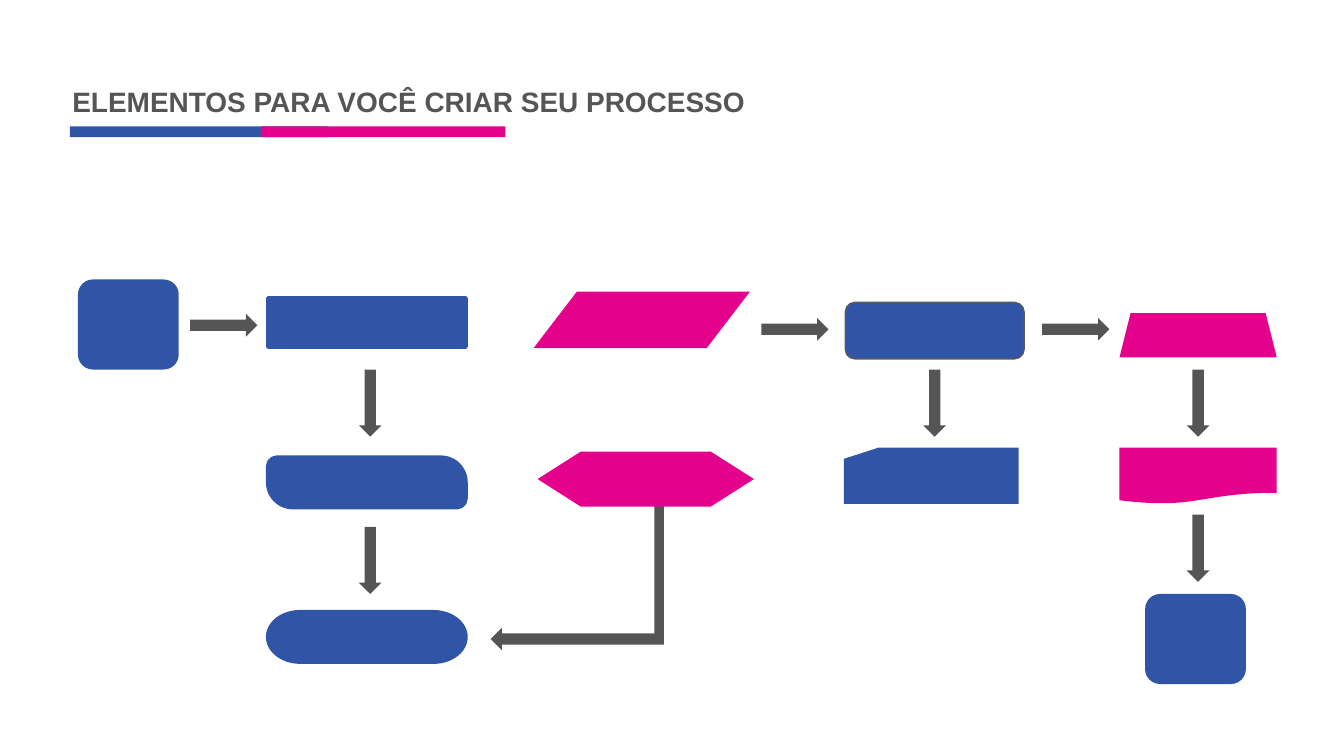
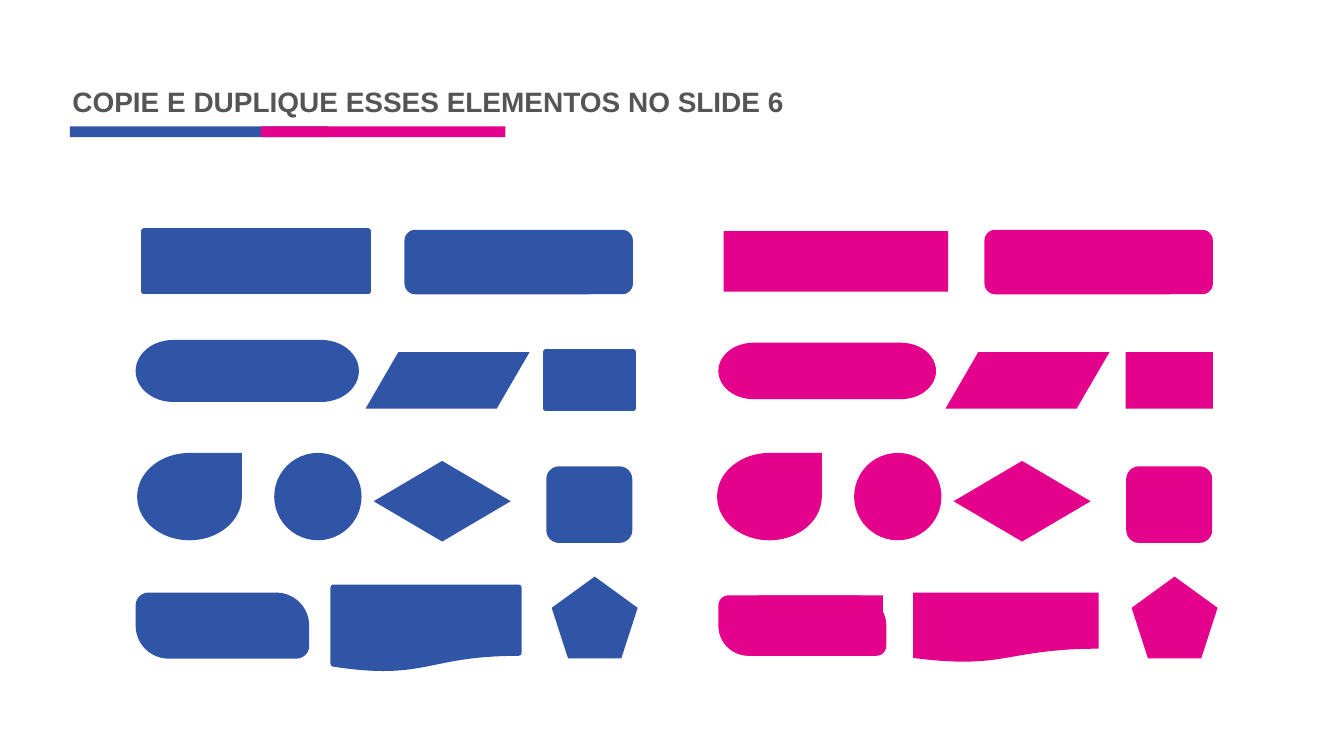
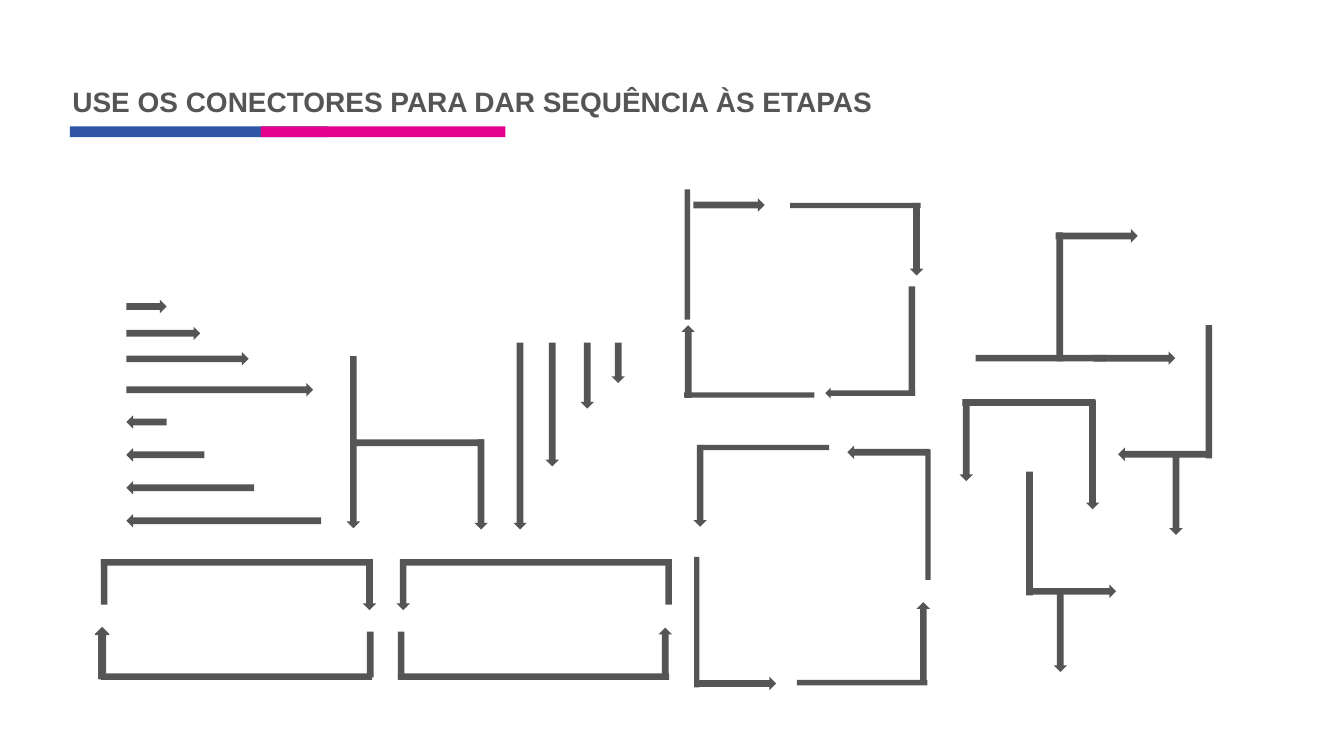
from dataclasses import dataclass

from pptx import Presentation
from pptx.dml.color import RGBColor
from pptx.enum.shapes import MSO_SHAPE
from pptx.enum.text import MSO_ANCHOR, PP_ALIGN
from pptx.util import Inches, Pt

PROCESS = MSO_SHAPE.RECTANGLE
ROUNDED = MSO_SHAPE.ROUNDED_RECTANGLE
ALTERNATE = MSO_SHAPE.FLOWCHART_ALTERNATE_PROCESS
TERMINATOR = MSO_SHAPE.FLOWCHART_TERMINATOR
DIAGONAL = MSO_SHAPE.ROUND_2_DIAG_RECTANGLE
DATA = MSO_SHAPE.FLOWCHART_DATA
CARD = MSO_SHAPE.FLOWCHART_CARD
DOCUMENT = MSO_SHAPE.FLOWCHART_DOCUMENT
PREPARATION = MSO_SHAPE.FLOWCHART_PREPARATION
DECISION = MSO_SHAPE.FLOWCHART_DECISION
TRAPEZOID = MSO_SHAPE.TRAPEZOID
ELLIPSE = MSO_SHAPE.OVAL
PENTAGON = MSO_SHAPE.REGULAR_PENTAGON
TEARDROP = MSO_SHAPE.TEAR
DOWN_ARROW = MSO_SHAPE.DOWN_ARROW

WIDTH, HEIGHT = Inches(10), Inches(5.625)
CELL = WIDTH / 100
HEADINGS = {"down": (0, 1, 0), "left": (-1, 0, 90), "up": (0, -1, 180), "right": (1, 0, 270)}


@dataclass(frozen=True)
class Theme:
    blue: RGBColor = RGBColor(0x31, 0x55, 0xA6)
    pink: RGBColor = RGBColor(0xE4, 0x02, 0x8C)
    gray: RGBColor = RGBColor(0x55, 0x55, 0x55)
    edge: RGBColor = RGBColor(0x59, 0x59, 0x59)
    font: str = "Arial"
    title_size: float = 15
    rim: float = 3
    hairline: float = 0.75


THEME = Theme()


@dataclass
class Region:
    slide: object
    left: float = 0
    top: float = 0

    def inner(self, left, top):
        return Region(self.slide, self.left + left, self.top + top)

    def box(self, x, y, w, h):
        cells = self.left + x, self.top + y, w, h
        return [round(cell * CELL) for cell in cells]

    def element(self, kind, x, y, w, h, color, edge=None, edge_width=THEME.rim):
        element = self.slide.shapes.add_shape(kind, *self.box(x, y, w, h))
        element.shadow.inherit = False
        element.fill.solid()
        element.fill.fore_color.rgb = color
        if edge is None:
            element.line.fill.background()
        else:
            element.line.color.rgb = edge
            element.line.width = Pt(edge_width)
        if kind == DIAGONAL:
            element.adjustments[0] = 0.167
            element.adjustments[1] = 0.5
        return element

    def bar(self, x, y, w, h):
        self.element(PROCESS, x, y, w, h, THEME.gray)

    def arrow(self, heading, tail_x, tail_y, length, width=1, edge=None):
        dx, dy, angle = HEADINGS[heading]
        x = tail_x + (dx * length - width) / 2
        y = tail_y + (dy * length - length) / 2
        arrow = self.element(DOWN_ARROW, x, y, width, length, THEME.gray, edge, THEME.hairline)
        arrow.rotation = angle


def draw_heading(page, wording):
    title = page.slide.shapes.add_textbox(*page.box(4.4, 5.3, 93.2, 3.6))
    frame = title.text_frame
    frame.word_wrap = True
    frame.vertical_anchor = MSO_ANCHOR.TOP
    frame.margin_left = frame.margin_right = Inches(0.1)
    frame.margin_top = frame.margin_bottom = Inches(0.1)
    paragraph = frame.paragraphs[0]
    paragraph.alignment = PP_ALIGN.LEFT
    run = paragraph.add_run()
    run.text = wording
    run.font.name = THEME.font
    run.font.size = Pt(THEME.title_size)
    run.font.bold = True
    run.font.color.rgb = THEME.gray
    page.element(PROCESS, 5.2, 9.4, 19.2, 0.8, THEME.blue)
    page.element(PROCESS, 19.4, 9.4, 18.2, 0.8, THEME.pink)


def draw_opening_steps(region):
    region.element(ALTERNATE, 0, 0, 7.5, 6.7, THEME.blue)
    region.arrow("right", 8.35, 3.4, 5, 1.7)
    for kind, y in ((PROCESS, 1.4), (DIAGONAL, 13.3), (TERMINATOR, 24.8)):
        region.element(kind, 14.2, y, 14.6, 3.6, THEME.blue, THEME.blue)
    for y in (6.7, 18.4):
        region.arrow("down", 21.75, y, 5, 1.7)


def draw_input_steps(region):
    region.element(DATA, 3.2, 0, 16.1, 4.2, THEME.pink)
    region.arrow("right", 20.15, 2.8, 5, 1.7)
    region.arrow("left", 12.9, 25.85, 12.9, 1.7)
    region.bar(12.2, 15.1, 0.7, 11.1)
    region.element(PREPARATION, 3.5, 11.9, 16.1, 4.1, THEME.pink)


def draw_card_steps(region):
    region.element(ROUNDED, 0.1, 0, 13.3, 4.2, THEME.blue, THEME.edge, THEME.hairline)
    region.arrow("down", 6.75, 5, 5, 1.7)
    region.element(CARD, 0, 10.8, 13, 4.2, THEME.blue)
    region.arrow("right", 14.75, 2, 5, 1.7)


def draw_closing_steps(region):
    region.element(TRAPEZOID, 0, 0, 11.7, 3.3, THEME.pink)
    region.element(DOCUMENT, 0, 10, 11.7, 4.2, THEME.pink)
    region.element(ALTERNATE, 1.9, 20.9, 7.5, 6.7, THEME.blue)
    for y in (4.2, 15):
        region.arrow("down", 5.85, y, 5, 1.7)


def draw_process(page):
    draw_opening_steps(page.inner(5.8, 20.8))
    draw_input_steps(page.inner(36.5, 21.7))
    draw_card_steps(page.inner(62.8, 22.5))
    draw_closing_steps(page.inner(83.3, 23.3))


def draw_palette(region, color, rim, document_y, document_height):
    rimmed = (
        (PROCESS, 0.5, 0.1, 16.7, 4.5),
        (TERMINATOR, 0.1, 8.4, 16.2, 4.2),
        (PROCESS, 30.4, 9.1, 6.5, 4.2),
        (DIAGONAL, 0.1, 27.2, 12.5, 4.5),
        (DOCUMENT, 14.6, document_y, 13.8, document_height),
    )
    plain = (
        (ALTERNATE, 19.9, 0, 17, 4.8),
        (DATA, 17, 9.1, 12.2, 4.2),
        (TEARDROP, 0, 16.6, 7.8, 6.5),
        (ELLIPSE, 10.2, 16.6, 6.5, 6.5),
        (DECISION, 17.6, 17.2, 10.2, 6),
        (ALTERNATE, 30.45, 17.6, 6.4, 5.7),
        (PENTAGON, 30.85, 25.8, 6.4, 6.1),
    )
    for kind, *place in rimmed:
        region.element(kind, *place, color, rim)
    for kind, *place in plain:
        region.element(kind, *place, color)


def draw_elements(page):
    draw_palette(page.inner(10.2, 17.1), THEME.blue, THEME.blue, 26.6, 6.1)
    pink_side = page.inner(53.35, 17.1)
    draw_palette(pink_side, THEME.pink, None, 27, 5.2)
    pink_side.element(PROCESS, 3.05, 27.2, 9.3, 1.5, THEME.pink)


def draw_straight_arrows(region):
    for y, length in zip((0, 2, 3.9, 6.2), (3, 5.5, 9.1, 13.9)):
        region.arrow("right", 0, y, length)
    for row, length in enumerate((3, 5.8, 9.5, 14.5)):
        region.arrow("left", length, 8.6 + 2.45 * row, length)
    for x, length in zip((29.3, 31.7, 34.3, 36.6), (13.9, 9.2, 4.9, 3)):
        region.arrow("down", x, 2.7, length)


def draw_upper_ring(region):
    region.arrow("up", 0.3, 15.5, 5.4)
    region.bar(0, 15.1, 9.7, 0.4)
    region.arrow("right", 0.7, 1.15, 5.3)
    region.bar(0.05, 0, 0.4, 9.7)
    region.arrow("down", 17.3, 1, 5.4)
    region.bar(7.9, 1, 9.7, 0.4)
    region.arrow("left", 17.2, 15.15, 6.7, 0.8)
    region.bar(16.7, 7.2, 0.5, 8.1)


def draw_lower_ring(region):
    region.arrow("right", 0, 17.75, 6.1)
    region.bar(0, 8.35, 0.4, 9.7)
    region.arrow("down", 0.45, 0, 6.1)
    region.bar(0.35, 0, 9.7, 0.4)
    region.arrow("left", 17.5, 0.55, 6.1)
    region.bar(17.2, 0.35, 0.4, 9.7)
    region.arrow("up", 17.05, 17.8, 6.1)
    region.bar(7.65, 17.5, 9.7, 0.4)


def draw_branches(region):
    region.arrow("down", 0.2, 0, 12.8)
    region.arrow("down", 9.7, 6.2, 6.7)
    region.bar(0, 6.2, 9.9, 0.5)


def draw_double_turn(region):
    region.arrow("right", 8.75, 9.35, 6.1)
    region.bar(6, 0, 0.5, 9.6)
    region.bar(0, 9.1, 9.7, 0.5)
    region.arrow("right", 5.95, 0.25, 6.1)


def draw_fork(region):
    region.arrow("down", 0.3, 0, 6.1)
    region.arrow("down", 9.7, 0.1, 8.1)
    region.bar(0, 0, 9.9, 0.5)


def draw_turn_with_drop(region, heading, stem_x, stem_height, tail_x, reach, drop_x):
    region.arrow(heading, tail_x, stem_height - 0.3, reach)
    region.arrow("down", drop_x, stem_height - 0.4, 6.1)
    region.bar(stem_x, 0, 0.5, stem_height)


def draw_return_loop(region, heading, bar_x, arrow_x, stem_x, edge=None):
    rising = heading == "up"
    region.arrow(heading, arrow_x, 3.8 if rising else 0, 3.8, edge=edge)
    region.bar(bar_x, 3.4 if rising else 0, 20.2, 0.5)
    region.bar(stem_x, 0.3 if rising else 0, 0.5, 3.4)


def draw_connectors(page):
    draw_straight_arrows(page.inner(9.4, 22.8))
    draw_branches(page.inner(26.1, 26.5))
    draw_upper_ring(page.inner(50.9, 14.1))
    draw_lower_ring(page.inner(51.65, 33.1))
    draw_double_turn(page.inner(72.6, 17.3))
    draw_fork(page.inner(71.6, 29.7))
    draw_turn_with_drop(page.inner(83.2, 24.2), "left", 6.5, 9.9, 6.9, 6.9, 4.3)
    draw_turn_with_drop(page.inner(76.35, 35.1), "right", 0, 9.2, 0, 6.7, 2.55)
    upper, lower = page.inner(7.1, 41.6), page.inner(7.1, 46.7)
    draw_return_loop(upper, "down", 0.4, 20.4, 0.4)
    draw_return_loop(upper, "down", 22.7, 22.9, 42.4)
    draw_return_loop(lower, "up", 0.4, 0.5, 20.2, THEME.edge)
    draw_return_loop(lower, "up", 22.5, 42.4, 22.5)


def main():
    deck = Presentation()
    deck.slide_width, deck.slide_height = WIDTH, HEIGHT
    blank = deck.slide_layouts[6]
    for wording, draw_body in (
        ("ELEMENTOS PARA VOCÊ CRIAR SEU PROCESSO", draw_process),
        ("COPIE E DUPLIQUE ESSES ELEMENTOS NO SLIDE 6", draw_elements),
        ("USE OS CONECTORES PARA DAR SEQUÊNCIA ÀS ETAPAS", draw_connectors),
    ):
        page = Region(deck.slides.add_slide(blank))
        draw_body(page)
        draw_heading(page, wording)
    deck.save("out.pptx")


if __name__ == "__main__":
    main()
